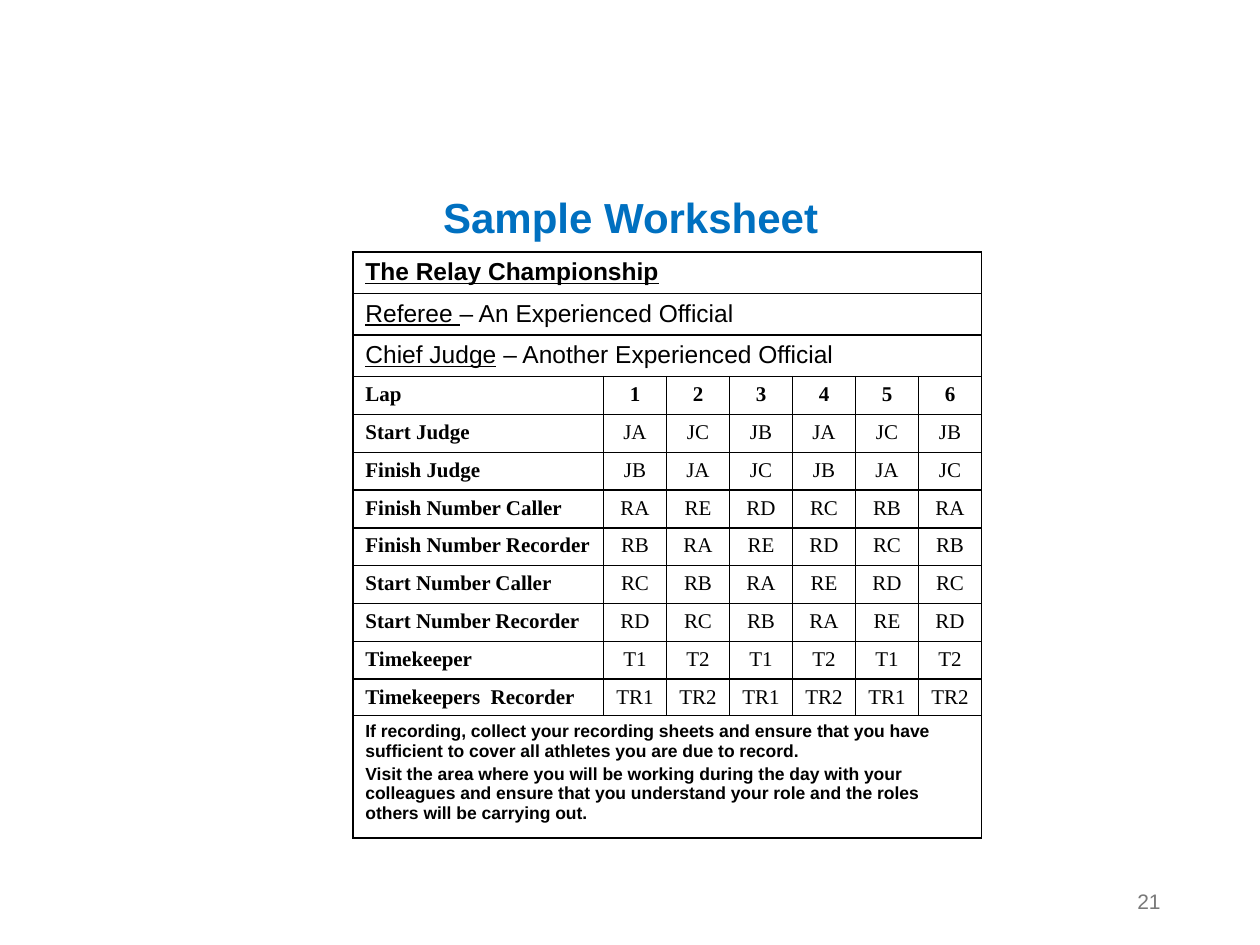
from dataclasses import dataclass
from itertools import cycle, islice
from typing import Any

from lxml.etree import SubElement
from pptx import Presentation
from pptx.dml.color import RGBColor
from pptx.enum.text import MSO_ANCHOR, MSO_AUTO_SIZE, PP_ALIGN
from pptx.oxml.ns import qn
from pptx.util import Inches, Pt


@dataclass(frozen=True)
class Theme:
    sans: str = "Arial"
    serif: str = "Times New Roman"
    black: RGBColor = RGBColor(0x00, 0x00, 0x00)
    blue: RGBColor = RGBColor(0x00, 0x70, 0xC0)
    grey: RGBColor = RGBColor(0x79, 0x79, 0x79)
    title: Pt = Pt(24)
    heading: Pt = Pt(14)
    body: Pt = Pt(12)
    note: Pt = Pt(10)
    border: Pt = Pt(1)


@dataclass(frozen=True)
class Heading:
    label: str
    detail: str = ""
    bold: bool = False


@dataclass(frozen=True)
class Duty:
    name: str
    rota: str
    bold: bool = False


@dataclass(frozen=True)
class Label:
    text: str
    box: tuple[float, float, float, float]
    align: PP_ALIGN
    anchor: MSO_ANCHOR
    wrap: bool
    size: MSO_AUTO_SIZE
    style: dict[str, Any]


THEME = Theme()
LAPS = 6
HANGING = Inches(0.38)
COLUMNS = [1.99] + [0.5] * LAPS

HEADINGS = [
    Heading("The Relay Championship", bold=True),
    Heading("Referee ", "– An Experienced Official"),
    Heading("Chief Judge", " – Another Experienced Official"),
]
DUTIES = [
    Duty("Lap", "1 2 3 4 5 6", bold=True),
    Duty("Start Judge", "JA JC JB"),
    Duty("Finish Judge", "JB JA JC"),
    Duty("Finish Number Caller", "RA RE RD RC RB"),
    Duty("Finish Number Recorder", "RB RA RE RD RC"),
    Duty("Start Number Caller", "RC RB RA RE RD"),
    Duty("Start Number Recorder", "RD RC RB RA RE"),
    Duty("Timekeeper", "T1 T2"),
    Duty("Timekeepers  Recorder", "TR1 TR2"),
]
NOTES = [
    "If recording, collect your recording sheets and ensure that you have "
    "sufficient to cover all athletes you are due to record.",
    "Visit the area where you will be working during the day with your colleagues "
    "and ensure that you understand your role and the roles others will be carrying out.",
]
ROWS = [0.33] * len(HEADINGS) + [0.3] * (len(DUTIES) - 1) + [0.29, 0.97]

LABELS = [
    Label("Sample Worksheet", (3.4, 1.47, 3.21, 0.5), PP_ALIGN.CENTER,
          MSO_ANCHOR.TOP, False, MSO_AUTO_SIZE.SHAPE_TO_FIT_TEXT,
          dict(name=THEME.sans, size=THEME.title, color=THEME.blue, bold=True)),
    Label("21", (7.06, 6.95, 2.25, 0.4), PP_ALIGN.RIGHT,
          MSO_ANCHOR.MIDDLE, True, MSO_AUTO_SIZE.NONE,
          dict(name=THEME.sans, size=THEME.body, color=THEME.grey)),
]


def add_run(p, text: str, style: dict[str, Any]) -> None:
    r = p.add_run()
    r.text = text
    for key, value in style.items():
        if key == "color":
            r.font.color.rgb = value
        else:
            setattr(r.font, key, value)


def add_label(slide, label: Label) -> None:
    sp = slide.shapes.add_textbox(*map(Inches, label.box))
    tf = sp.text_frame
    tf.word_wrap, tf.auto_size = label.wrap, label.size
    tf.vertical_anchor = label.anchor
    p = tf.paragraphs[0]
    p.alignment = label.align
    add_run(p, label.text, label.style)


def format_cell(cell) -> None:
    tc_pr = cell._tc.get_or_add_tcPr()
    for side in ("lnL", "lnR", "lnT", "lnB"):
        ln = SubElement(tc_pr, qn(f"a:{side}"), w=str(THEME.border))
        fill = SubElement(ln, qn("a:solidFill"))
        SubElement(fill, qn("a:srgbClr"), val=str(THEME.black))
    cell.fill.background()


def hanging_paragraph(cell, align: PP_ALIGN = PP_ALIGN.LEFT):
    p = cell.text_frame.paragraphs[0]
    p.alignment = align
    p_pr = p._p.get_or_add_pPr()
    p_pr.set("marL", str(HANGING))
    p_pr.set("indent", str(-HANGING))
    return p


def fill_heading(cell, heading: Heading) -> None:
    style = dict(name=THEME.sans, size=THEME.heading, color=THEME.black, bold=heading.bold)
    p = hanging_paragraph(cell)
    add_run(p, heading.label, style | dict(underline=True))
    if heading.detail:
        add_run(p, heading.detail, style)


def fill_duty(cells: list, duty: Duty) -> None:
    style = dict(name=THEME.serif, size=THEME.body, color=THEME.black)
    add_run(hanging_paragraph(cells[0]), duty.name, style | dict(bold=True))
    for cell, code in zip(cells[1:], islice(cycle(duty.rota.split()), LAPS)):
        add_run(hanging_paragraph(cell, PP_ALIGN.CENTER), code, style | dict(bold=duty.bold))


def fill_notes(cell, notes: list[str]) -> None:
    style = dict(name=THEME.sans, size=THEME.note, color=THEME.black, bold=True)
    tf = cell.text_frame
    for i, note in enumerate(notes):
        p = tf.add_paragraph() if i else tf.paragraphs[0]
        p.space_before = Pt(2 if i else 0)
        add_run(p, note, style)


def add_worksheet(slide) -> None:
    frame = slide.shapes.add_table(len(ROWS), len(COLUMNS), Inches(2.8), Inches(2),
                                   Inches(sum(COLUMNS)), Inches(sum(ROWS)))
    table = frame.table
    table.first_row = table.horz_banding = False
    for column, width in zip(table.columns, COLUMNS):
        column.width = Inches(width)
    for row, height in zip(table.rows, ROWS):
        row.height = Inches(height)
    for cell in table.iter_cells():
        format_cell(cell)

    last = len(ROWS) - 1
    for i in [*range(len(HEADINGS)), last]:
        table.cell(i, 0).merge(table.cell(i, LAPS))
    for i, heading in enumerate(HEADINGS):
        fill_heading(table.cell(i, 0), heading)
    for i, duty in enumerate(DUTIES, len(HEADINGS)):
        fill_duty(list(table.rows[i].cells), duty)
    fill_notes(table.cell(last, 0), NOTES)


def main() -> None:
    prs = Presentation()
    prs.slide_width, prs.slide_height = Inches(10), Inches(7.5)
    slide = prs.slides.add_slide(prs.slide_layouts[6])
    add_worksheet(slide)
    for label in LABELS:
        add_label(slide, label)
    prs.save("out.pptx")


if __name__ == "__main__":
    main()
